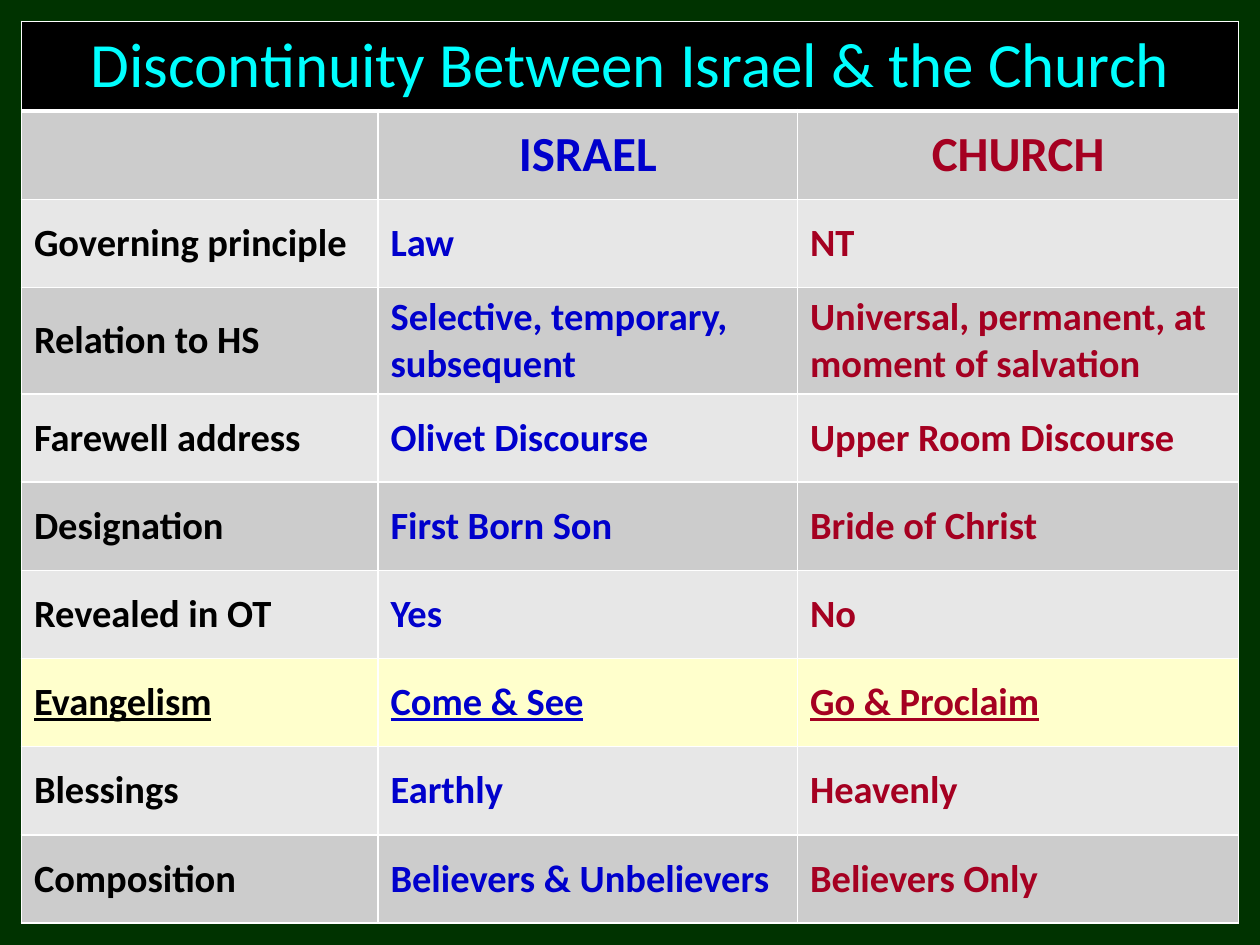
import pptx
import pptx.util
import pptx.dml.color
import pptx.enum.text
import lxml.etree
import pptx.oxml.ns

Inches, Pt = pptx.util.Inches, pptx.util.Pt
RGBColor = pptx.dml.color.RGBColor
PP_ALIGN = pptx.enum.text.PP_ALIGN
qn = pptx.oxml.ns.qn

GREEN = RGBColor(0x00, 0x33, 0x00)
BLACK = RGBColor(0x00, 0x00, 0x00)
WHITE = RGBColor(0xFF, 0xFF, 0xFF)
CYAN = RGBColor(0x00, 0xFF, 0xFF)
BLUE = RGBColor(0x00, 0x00, 0xCC)
RED = RGBColor(0xA5, 0x00, 0x21)
DARK_GRAY = RGBColor(0xCC, 0xCC, 0xCC)
LIGHT_GRAY = RGBColor(0xE7, 0xE7, 0xE7)
YELLOW = RGBColor(0xFF, 0xFF, 0xCC)

COLUMN_WIDTHS = [2.83, 3.33, 3.5]
COLUMN_COLORS = [BLACK, BLUE, RED]
ROW_HEIGHT = 0.7
ROWS = [
    ["Discontinuity Between Israel & the Church", "", ""],
    ["", "ISRAEL", "CHURCH"],
    ["Governing principle", "Law", "NT"],
    ["Relation to HS", "Selective, temporary, subsequent",
     "Universal, permanent, at moment of salvation"],
    ["Farewell address", "Olivet Discourse", "Upper Room Discourse"],
    ["Designation", "First Born Son", "Bride of Christ"],
    ["Revealed in OT", "Yes", "No"],
    ["Evangelism", "Come & See", "Go & Proclaim"],
    ["Blessings", "Earthly", "Heavenly"],
    ["Composition", "Believers & Unbelievers", "Believers Only"],
]
TITLE_ROW, HEADING_ROW, HIGHLIGHT_ROW = 0, 1, 7


def set_borders(cell, color, bottom_width=1):
    """Draw 1 pt lines round the cell; call before the fill is set."""
    tc_pr = cell._tc.get_or_add_tcPr()
    for side in ("L", "R", "T", "B"):
        width = bottom_width if side == "B" else 1
        ln = lxml.etree.SubElement(tc_pr, qn(f"a:ln{side}"), w=str(Pt(width)))
        fill = lxml.etree.SubElement(ln, qn("a:solidFill"))
        lxml.etree.SubElement(fill, qn("a:srgbClr"), val=str(color))


prs = pptx.Presentation()
prs.slide_width, prs.slide_height = Inches(10), Inches(7.5)
s = prs.slides.add_slide(prs.slide_layouts[6])
s.background.fill.solid()
s.background.fill.fore_color.rgb = GREEN

frame = s.shapes.add_table(
    len(ROWS), len(COLUMN_WIDTHS), Inches(0.17), Inches(0.17),
    Inches(sum(COLUMN_WIDTHS)), Inches(ROW_HEIGHT * len(ROWS)))
table = frame.table
for column, width in zip(table.columns, COLUMN_WIDTHS):
    column.width = Inches(width)
for row in table.rows:
    row.height = Inches(ROW_HEIGHT)
table.cell(TITLE_ROW, 0).merge(table.cell(TITLE_ROW, 2))

for i, texts in enumerate(ROWS):
    is_title = i == TITLE_ROW
    size = {TITLE_ROW: 36, HEADING_ROW: 28}.get(i, 22)
    row_fill = {TITLE_ROW: BLACK, HIGHLIGHT_ROW: YELLOW}.get(
        i, DARK_GRAY if i % 2 else LIGHT_GRAY)
    for j, text in enumerate(texts):
        cell = table.cell(i, j)
        set_borders(cell, WHITE, 3 if is_title else 1)
        cell.fill.solid()
        cell.fill.fore_color.rgb = row_fill
        cell.vertical_anchor = pptx.enum.text.MSO_ANCHOR.MIDDLE
        if not text:
            continue
        p = cell.text_frame.paragraphs[0]
        p.text = text
        p.alignment = PP_ALIGN.CENTER if i <= HEADING_ROW else PP_ALIGN.LEFT
        font = p.runs[0].font
        font.name = "Calibri"
        font.size = Pt(size)
        font.bold = not is_title
        font.underline = i == HIGHLIGHT_ROW
        font.color.rgb = CYAN if is_title else COLUMN_COLORS[j]

prs.save("out.pptx")
